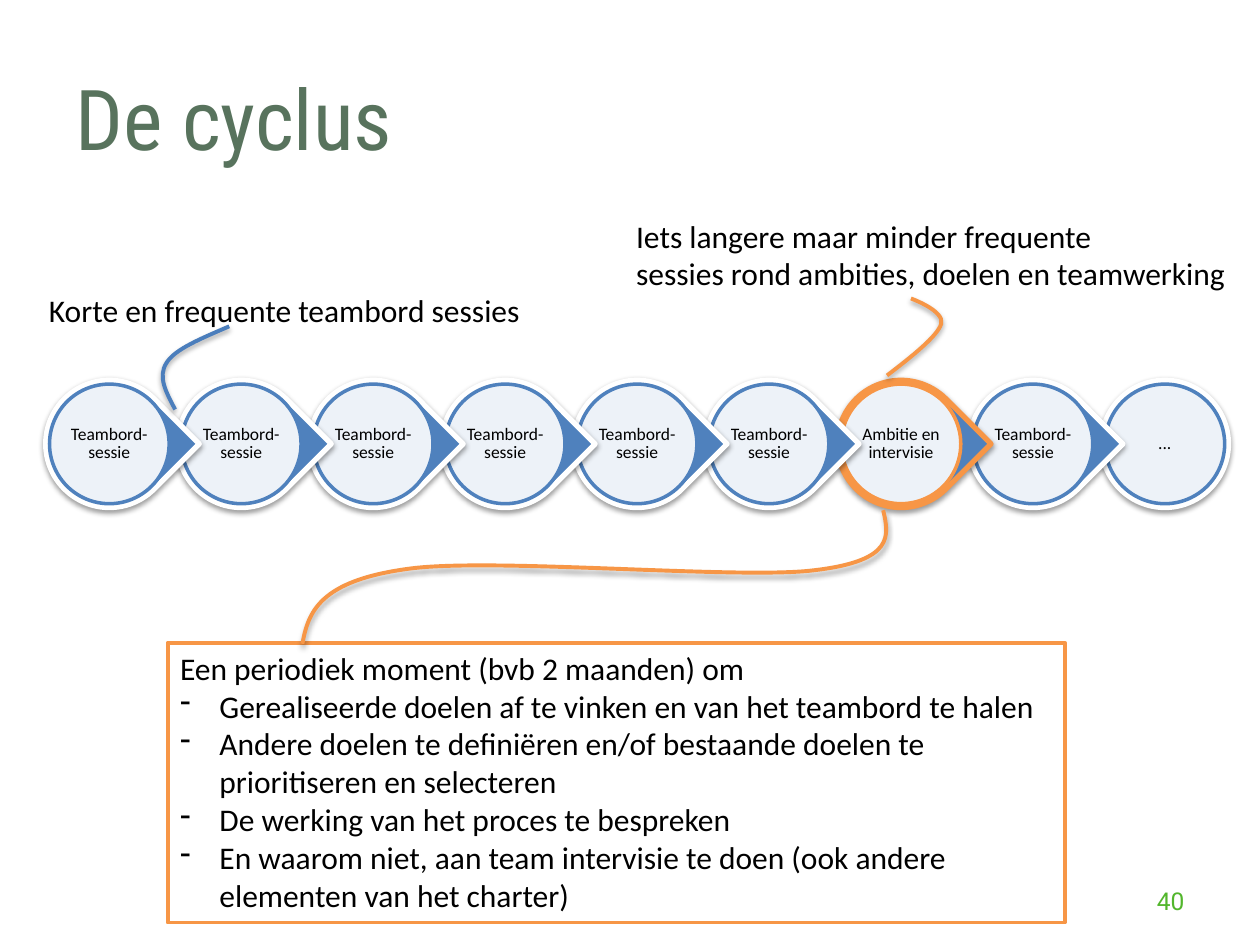
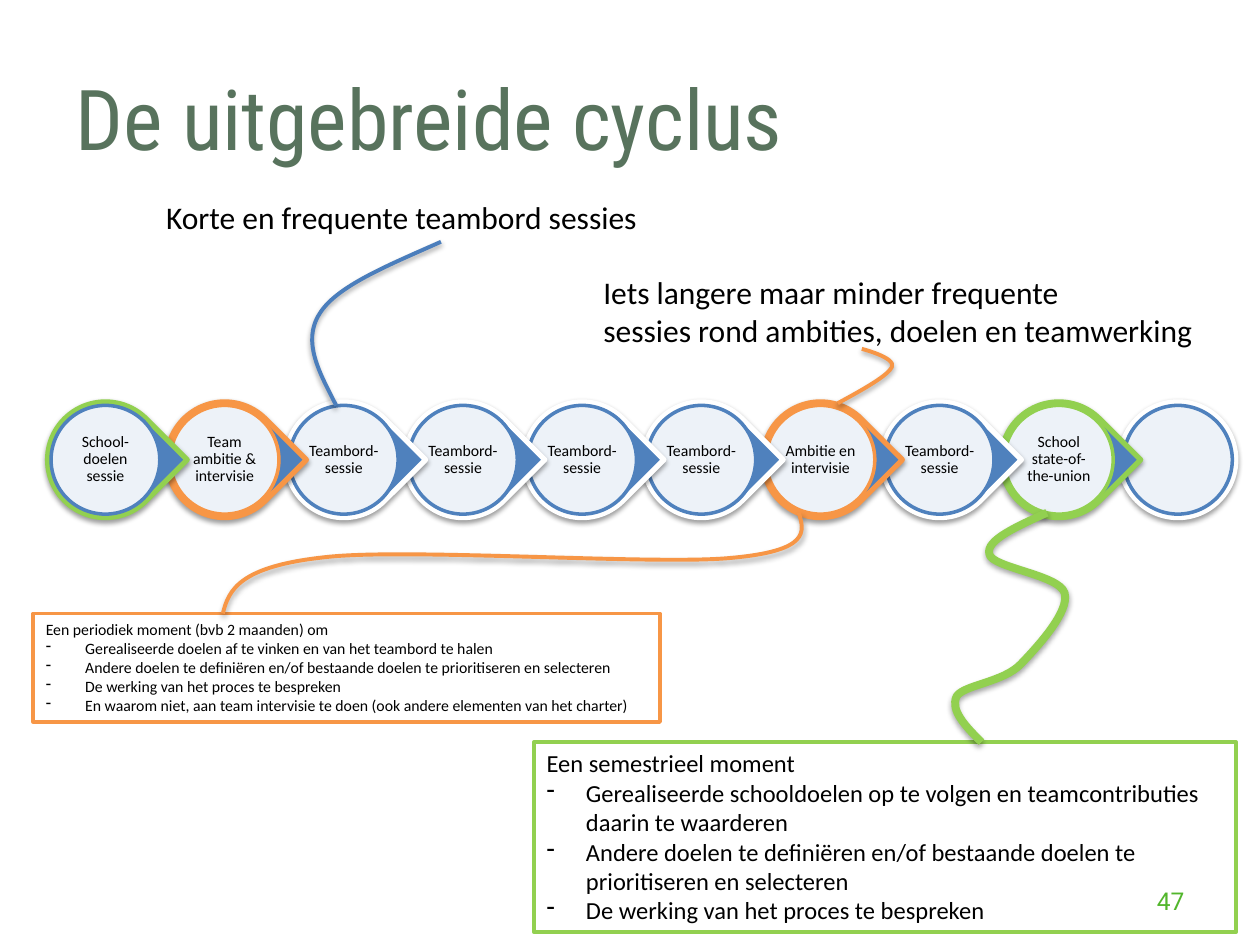
import lxml.etree
import pptx
import pptx.dml.color
import pptx.enum.shapes
import pptx.enum.text
import pptx.oxml.ns
import pptx.util

Pt = pptx.util.Pt
qn = pptx.oxml.ns.qn
Align = pptx.enum.text.PP_ALIGN
Anchor = pptx.enum.text.MSO_ANCHOR
Shape = pptx.enum.shapes.MSO_SHAPE
rgb = pptx.dml.color.RGBColor.from_string


class Theme:
    title_font, body_font, number_font = "Roboto Condensed", "Calibri", "Roboto"
    title_size, caption_size, number_size = 48, 18, 14
    title, number, text = rgb("58735D"), rgb("52B62C"), rgb("000000")
    white, blue, curve_blue = rgb("FFFFFF"), rgb("4F81BD"), rgb("4B7EBC")
    orange, green = rgb("F79646"), rgb("92D050")


def write(frame, text, size, color=Theme.text, font=Theme.body_font,
          align=Align.LEFT, dash=False, spacing=None):
    """Fill the empty first paragraph of the frame, or add one below."""
    para = frame.paragraphs[0]
    if para.text:
        para = frame.add_paragraph()
    if dash:
        properties = para._p.get_or_add_pPr()
        properties.set("marL", str(Pt(22.5)))
        properties.set("indent", str(-Pt(22.5)))
        lxml.etree.SubElement(properties, qn("a:buChar"), char="-")
    para.alignment = align
    if spacing:
        para.line_spacing = spacing
    span = para.add_run()
    span.text = text
    span.font.name, span.font.size = font, Pt(size)
    span.font.color.rgb = color


def cast_shadow(shape, distance, opacity):
    shape.shadow.inherit = False
    effects = shape._element.spPr.find(qn("a:effectLst"))
    shadow = lxml.etree.SubElement(
        effects, qn("a:outerShdw"), blurRad=str(Pt(3.1)), dist=str(Pt(distance)),
        dir="5400000", rotWithShape="0")
    black = lxml.etree.SubElement(shadow, qn("a:srgbClr"), val="000000")
    lxml.etree.SubElement(black, qn("a:alpha"), val=str(opacity * 1000))


# Bezier points as fractions of the way from the start of a curve to its end
SWEEP = [(-.01, .19), (-.02, .38), (.12, .45), (.25, .52), (.68, .35),
         (.82, .44), (.97, .53), (.99, .76), (1, 1)]
HOOK = [(-.16, .2), (-.33, .39), (-.16, .56), (0, .73), (.51, .86), (1, 1)]
FLICK = [(1.05, .25), (2.1, .51), (2.26, .67), (2.42, .84), (1, 1), (1, 1)]
WINDING = [(.46, .06), (.94, .12), (.88, .18), (.85, .24), (-.19, .27),
           (-.27, .35), (-.35, .43), (.13, .58), (.4, .66), (.67, .74),
           (1.27, .75), (1.38, .8), (1.48, .86), (1.25, .93), (1, 1)]

# Label, outline of the drop, outline of the disc
TEAM = ("Teambord-sessie", Theme.white, Theme.blue)
AMBITION = ("Ambitie en intervisie", Theme.orange, Theme.orange)

SHORT_SESSIONS = ["Korte en frequente teambord sessies"]
LONG_SESSIONS = ["Iets langere maar minder frequente",
                 "sessies rond ambities, doelen en teamwerking"]
PRIORITISE = ("Andere doelen te definiëren en/of bestaande doelen te "
              "prioritiseren en selecteren")
DISCUSS = "De werking van het proces te bespreken"
PERIODIC = [
    "Een periodiek moment (bvb 2 maanden) om",
    "Gerealiseerde doelen af te vinken en van het teambord te halen",
    PRIORITISE,
    DISCUSS,
    "En waarom niet, aan team intervisie te doen (ook andere elementen van het charter)",
]
SEMESTER = [
    "Een semestrieel moment",
    "Gerealiseerde schooldoelen op te volgen en teamcontributies daarin te waarderen",
    PRIORITISE,
    DISCUSS,
]

# chain: left, top, drop size, pitch, type size
# notes: left, top, width, height, type size, border, lines
# curves: bend, start, end, colour, weight
PAGES = [
    dict(
        title="De cyclus", number="40",
        chain=(26.1, 217.3, 72.7, 75.4, 10),
        steps=[TEAM] * 6 + [AMBITION, TEAM, ("...", Theme.white, Theme.blue)],
        notes=[
            (95.8, 367.2, 512.6, 160, 18, Theme.orange, PERIODIC),
            (20.9, 162.7, 286.6, 29, Theme.caption_size, None, SHORT_SESSIONS),
            (356.4, 120.2, 356.4, 51, Theme.caption_size, None, LONG_SESSIONS),
        ],
        curves=[
            (SWEEP, (504.7, 291.6), (172.8, 367.9), Theme.orange, 2.25),
            (HOOK, (100.1, 234), (131, 186.5), Theme.curve_blue, 2.25),
            (FLICK, (506.9, 214.6), (520.6, 170.6), Theme.orange, 2.25),
        ],
    ),
    dict(
        title="De uitgebreide cyclus", number="47",
        chain=(27.2, 229.7, 66.1, 68.1, 9),
        steps=[("School-doelen sessie", Theme.green, Theme.blue),
               ("Team ambitie & intervisie", Theme.orange, Theme.orange)]
        + [TEAM] * 4
        + [AMBITION, TEAM,
           ("School state-of-the-union", Theme.green, Theme.green),
           ("", Theme.white, Theme.blue)],
        notes=[
            (19.1, 350.6, 358, 62, 9, Theme.orange, PERIODIC),
            (87.8, 109.4, 286.6, 29, Theme.caption_size, None, SHORT_SESSIONS),
            (337.7, 152.6, 356.4, 51, Theme.caption_size, None, LONG_SESSIONS),
            (305.3, 424.1, 401, 108.7, 14, Theme.green, SEMESTER),
        ],
        curves=[
            (SWEEP, (456.5, 293), (127.4, 350.6), Theme.orange, 2.25),
            (HOOK, (192.2, 231.8), (252, 138.2), Theme.curve_blue, 2.25),
            (FLICK, (478.8, 230.4), (492.5, 199.4), Theme.orange, 2.25),
            (WINDING, (598.3, 293), (560.9, 424.1), Theme.green, 4.5),
        ],
    ),
]

deck = pptx.Presentation()
deck.slide_width, deck.slide_height = Pt(720), Pt(540)
title_only = deck.slide_layouts[5]

for content in PAGES:
    page = deck.slides.add_slide(title_only)
    title = page.shapes.title
    title.left, title.top, title.width, title.height = Pt(36), Pt(21.6), Pt(592.6), Pt(90)
    title.text_frame.vertical_anchor = Anchor.MIDDLE
    write(title.text_frame, content["title"], Theme.title_size, Theme.title, Theme.title_font)

    # Each step overlaps the next one, so the last is placed first
    left, top, size, pitch, label_size = content["chain"]
    chain = page.shapes.add_group_shape()
    last = len(content["steps"]) - 1
    for index, (label, drop_line, disc_line) in reversed(list(enumerate(content["steps"]))):
        step_left = left + index * pitch
        drop = chain.shapes.add_shape(
            Shape.OVAL if index == last else Shape.TEAR,
            Pt(step_left), Pt(top), Pt(size), Pt(size))
        if index != last:
            drop.rotation = 45
        drop.fill.solid()
        drop.fill.fore_color.rgb = Theme.blue
        drop.line.color.rgb, drop.line.width = drop_line, Pt(3)
        cast_shadow(drop, 1.6, 38)

        inset = size * 0.03
        disc_size = size - 2 * inset
        disc = chain.shapes.add_shape(
            Shape.OVAL, Pt(step_left + inset), Pt(top + inset), Pt(disc_size), Pt(disc_size))
        disc.fill.solid()
        disc.fill.fore_color.rgb = Theme.white
        tint = disc._element.spPr.find(qn("a:solidFill"))[0]
        lxml.etree.SubElement(tint, qn("a:alpha"), val="90000")
        disc.line.color.rgb, disc.line.width = disc_line, Pt(2)
        disc.shadow.inherit = False

        if label:
            inset = size * 0.165
            label_width = size - 2 * inset
            box = chain.shapes.add_textbox(
                Pt(step_left + inset), Pt(top + inset), Pt(label_width), Pt(label_width))
            frame = box.text_frame
            frame.word_wrap, frame.vertical_anchor = True, Anchor.MIDDLE
            frame.margin_left = frame.margin_right = Pt(0.9)
            frame.margin_top = frame.margin_bottom = Pt(0.9)
            write(frame, label, label_size, align=Align.CENTER, spacing=0.9)

    number = page.shapes.add_textbox(Pt(516.2), Pt(500.4), Pt(167.8), Pt(28.8))
    number.text_frame.word_wrap = True
    number.text_frame.vertical_anchor = Anchor.MIDDLE
    write(number.text_frame, content["number"], Theme.number_size, Theme.number,
          Theme.number_font, Align.RIGHT)

    for left, top, width, height, size, border, lines in content["notes"]:
        box = page.shapes.add_textbox(Pt(left), Pt(top), Pt(width), Pt(height))
        box.text_frame.word_wrap = border is not None
        box.text_frame.auto_size = pptx.enum.text.MSO_AUTO_SIZE.SHAPE_TO_FIT_TEXT
        if border:
            box.line.color.rgb, box.line.width = border, Pt(2.25)
        for index, line in enumerate(lines):
            write(box.text_frame, line, size, dash=border is not None and index > 0)

    for bend, (start_x, start_y), (end_x, end_y), color, weight in content["curves"]:
        builder = page.shapes.build_freeform(Pt(start_x), Pt(start_y))
        builder.add_line_segments(
            [(Pt(start_x + x * (end_x - start_x)), Pt(start_y + y * (end_y - start_y)))
             for x, y in bend], close=False)
        curve = builder.convert_to_shape()
        outline = curve._element.find(".//" + qn("a:path"))
        segments = outline.findall(qn("a:lnTo"))
        for first in range(0, len(segments), 3):
            bezier = lxml.etree.SubElement(outline, qn("a:cubicBezTo"))
            for segment in segments[first:first + 3]:
                bezier.append(segment[0])
                outline.remove(segment)
        curve.fill.background()
        curve.line.color.rgb, curve.line.width = color, Pt(weight)
        cast_shadow(curve, 1.8, 35)

deck.save("out.pptx")
